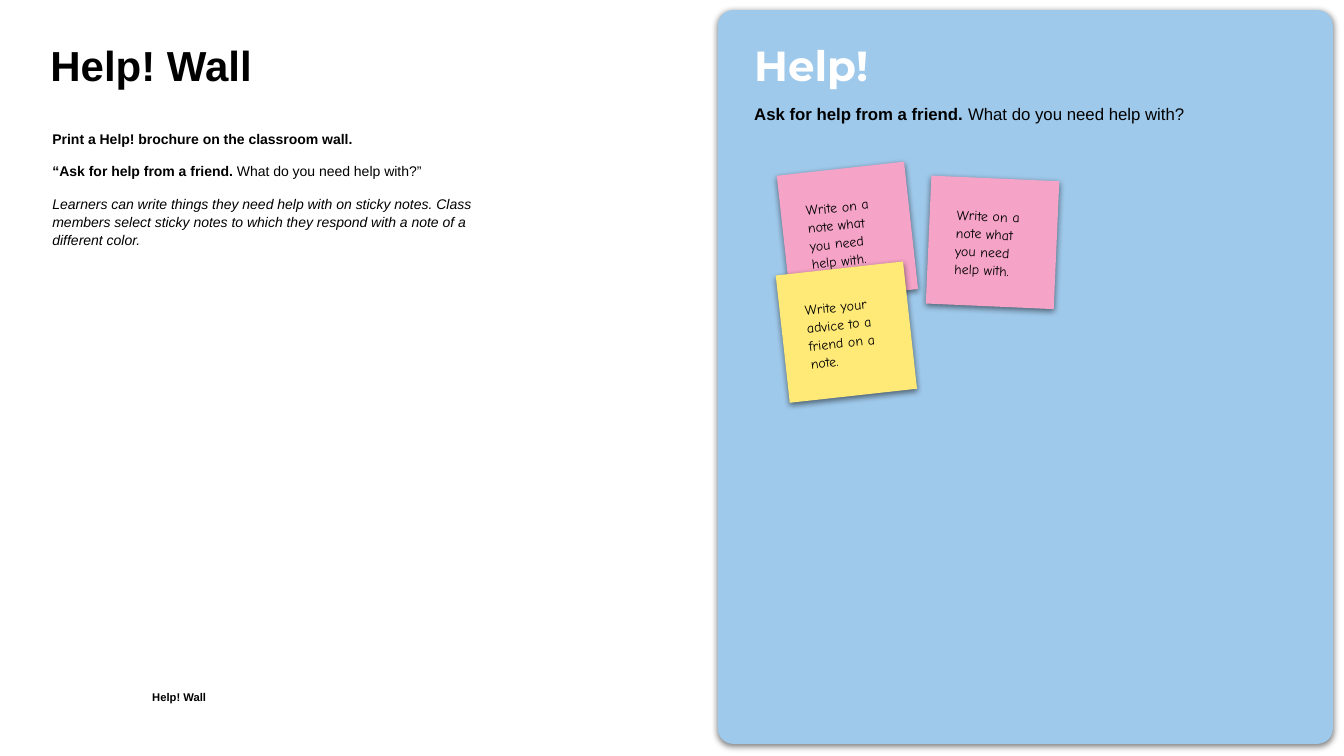
from lxml import etree
from pptx import Presentation
from pptx.dml.color import RGBColor
from pptx.enum.shapes import MSO_SHAPE
from pptx.enum.text import MSO_ANCHOR, MSO_AUTO_SIZE, PP_ALIGN
from pptx.oxml.ns import qn
from pptx.util import Pt

PX = 9144
RECT, ROUND = MSO_SHAPE.RECTANGLE, MSO_SHAPE.ROUNDED_RECTANGLE
TOP, LEFT, FIXED = MSO_ANCHOR.TOP, PP_ALIGN.LEFT, MSO_AUTO_SIZE.NONE

BLACK, WHITE, BLUE, PINK, GOLD = "000000", "FFFFFF", "9FC9EB", "F5A3C7", "FFEA77"
SIZE = 1333, 750
PANEL = 712, 10, 610, 728
NOTE, PAD_W, PAD_H, PAD_TOP = 127, 94, 90, 18

TITLE = (50, 45, 1219, 36), 30, "Arial", BLACK, [(0.9, 0, [("Help! Wall", "b")])]
TEXTS = [
    ((151, 686, 410, 22), 8, "Arial", BLACK, [(0.9, 0, [("Help! Wall", "b")])]),
    ((748, 105, 471, 67), 12, "Arial", BLACK, [
        (0.9, 0, [("Ask for help from a friend. ", "b"),
                  ("What do you need help with?", "")])]),
    ((748, 45, 328, 44), 30, "Montserrat", WHITE, [(0.9, 0, [("Help!", "b")])]),
    ((52, 128, 453, 499), 10, "Arial", BLACK, [
        (1.07, 0, [("Print a Help! brochure on the classroom wall.", "b")]),
        (0.9, 12.3, [("“Ask for help from a friend. ", "b"),
                     ("What do you need help with?”", "")]),
        (1.07, 10.4, [("Learners can write things they need help with on sticky "
                       "notes. Class members select sticky notes to which they "
                       "respond with a note of a different color.", "i")])]),
]
ASK = "Write on a note what you need help with."
TIP = "Write your advice to a friend on a note."
NOTES = [
    (921, 177, 17, 2.5, PINK, ASK),
    (777, 167, 15, 353.7, PINK, ASK),
    (776, 266, 15, 353.7, GOLD, TIP),
]


def color(code):
    return RGBColor.from_string(code)


def place(shape, box):
    shape.left, shape.top, shape.width, shape.height = [n * PX for n in box]


def write(shape, size, face, ink, paras, inset=0):
    frame = shape.text_frame
    frame.word_wrap = True
    frame.auto_size = FIXED
    frame.vertical_anchor = TOP
    frame.margin_left = frame.margin_right = inset * PX
    frame.margin_top = frame.margin_bottom = inset * PX
    for i, (line, gap, runs) in enumerate(paras):
        para = frame.add_paragraph() if i else frame.paragraphs[0]
        para.alignment = LEFT
        para.line_spacing = line
        para.space_before = Pt(gap)
        for text, style in runs:
            run = para.add_run()
            run.text = text
            font = run.font
            font.name, font.size = face, Pt(size)
            font.bold, font.italic = style == "b", style == "i"
            font.color.rgb = color(ink)


def add_text(box, *rest):
    shape = slide.shapes.add_textbox(0, 0, 0, 0)
    place(shape, box)
    write(shape, *rest)
    return shape


def add_card(kind, box, fill):
    card = slide.shapes.add_shape(kind, 0, 0, 0, 0)
    place(card, box)
    card.fill.solid()
    card.fill.fore_color.rgb = color(fill)
    card.line.fill.background()
    card.shadow.inherit = False
    effects = card.element.spPr.find(qn("a:effectLst"))
    shade = etree.SubElement(effects, qn("a:outerShdw"), blurRad=str(Pt(4.5)),
                             dist=str(Pt(1.5)), dir="5400000",
                             algn="ctr", rotWithShape="0")
    ink = etree.SubElement(shade, qn("a:srgbClr"), val=BLACK)
    etree.SubElement(ink, qn("a:alpha"), val="50000")
    return card


deck = Presentation()
deck.slide_width, deck.slide_height = [n * PX for n in SIZE]
slide = deck.slides.add_slide(deck.slide_layouts[5])

place(slide.shapes.title, TITLE[0])
write(slide.shapes.title, *TITLE[1:])

panel = add_card(ROUND, PANEL, BLUE)
panel.adjustments[0] = 0.025
for item in TEXTS:
    add_text(*item)

for x, y, shift, turn, fill, words in NOTES:
    card = add_card(RECT, (x, y, NOTE, NOTE), fill)
    label = add_text((x + shift, y + PAD_TOP, PAD_W, PAD_H), 10, "Comic Neue",
                     BLACK, [(1.07, 0, [(words, "")])], 10)
    card.rotation = label.rotation = turn

deck.save("out.pptx")
